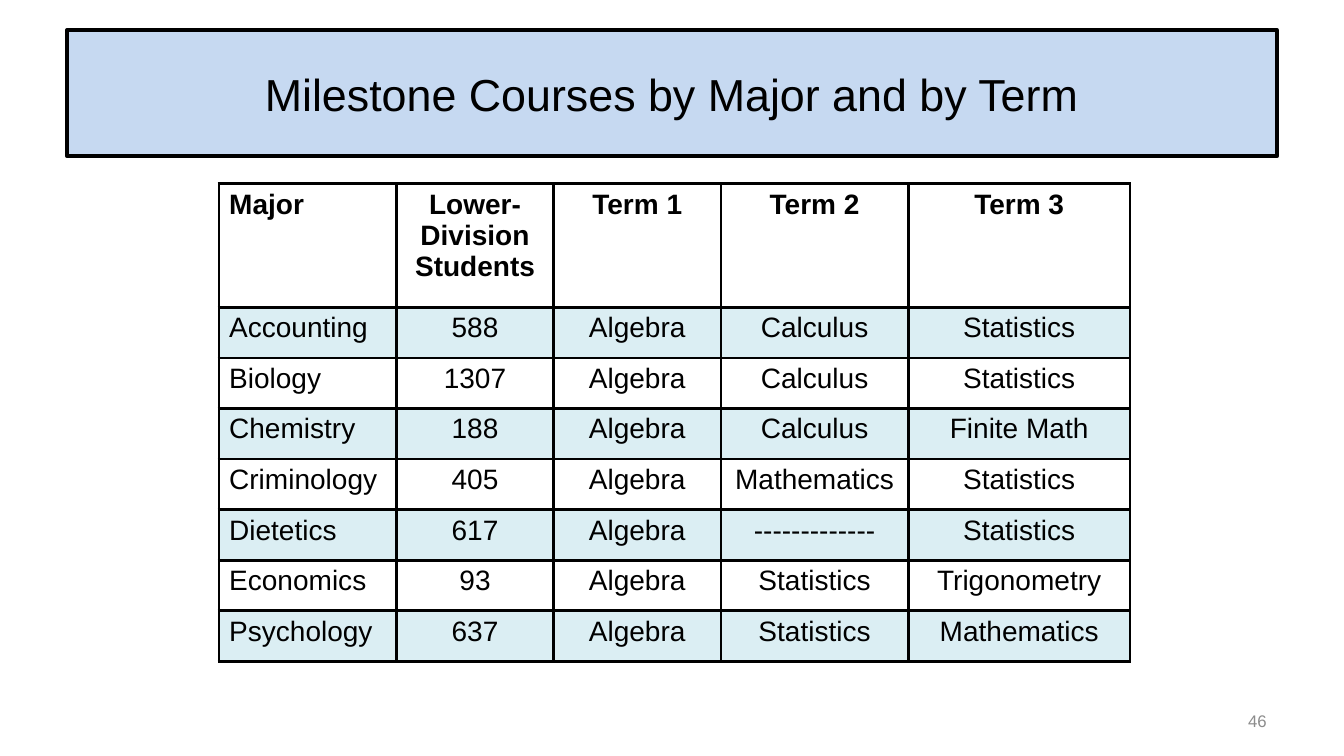
from lxml import etree
from pptx import Presentation
from pptx.dml.color import RGBColor
from pptx.enum.text import MSO_ANCHOR, PP_ALIGN
from pptx.oxml.ns import qn
from pptx.util import Pt

LEFT, CENTER, RIGHT = PP_ALIGN.LEFT, PP_ALIGN.CENTER, PP_ALIGN.RIGHT
MIDDLE = MSO_ANCHOR.MIDDLE
TITLE_ONLY = 5

BLACK, GRAY, PALE_BLUE, TEAL = "000000", "8C8C8C", "C6D9F1", "4BACC6"
BAND_OPACITY = 20
BORDER_WIDTH = 2.25

COLUMN_WIDTHS = [126.7, 112.3, 119.5, 133.9, 158.4]
HEADER_HEIGHT, ROW_HEIGHT = 88.5, 36.1
COURSES = [
    ("Major", "Lower-Division Students", "Term 1", "Term 2", "Term 3"),
    ("Accounting", "588", "Algebra", "Calculus", "Statistics"),
    ("Biology", "1307", "Algebra", "Calculus", "Statistics"),
    ("Chemistry", "188", "Algebra", "Calculus", "Finite Math"),
    ("Criminology", "405", "Algebra", "Mathematics", "Statistics"),
    ("Dietetics", "617", "Algebra", "-------------", "Statistics"),
    ("Economics", "93", "Algebra", "Statistics", "Trigonometry"),
    ("Psychology", "637", "Algebra", "Statistics", "Mathematics"),
]


def rgb(color):
    return RGBColor.from_string(color)


def write_text(frame, text, size=20, color=BLACK, bold=False, align=CENTER):
    para = frame.paragraphs[0]
    para.alignment = align
    span = para.add_run()
    span.text = text
    span.font.name = "Arial"
    span.font.size = Pt(size)
    span.font.bold = bold
    span.font.color.rgb = rgb(color)


def place(shape, left, top, width, height):
    shape.left, shape.top = Pt(left), Pt(top)
    shape.width, shape.height = Pt(width), Pt(height)


def add_title(page, text):
    title = page.shapes.title
    place(title, 48, 21.6, 864, 90)
    title.fill.solid()
    title.fill.fore_color.rgb = rgb(PALE_BLUE)
    title.line.color.rgb = rgb(BLACK)
    title.line.width = Pt(3)
    title.text_frame.vertical_anchor = MIDDLE
    write_text(title.text_frame, text, size=32)


def set_borders(cell):
    properties = cell._tc.get_or_add_tcPr()
    for side in ("a:lnL", "a:lnR", "a:lnT", "a:lnB"):
        line = etree.SubElement(properties, qn(side), w=str(Pt(BORDER_WIDTH)))
        fill = etree.SubElement(line, qn("a:solidFill"))
        etree.SubElement(fill, qn("a:srgbClr"), val=BLACK)


def set_band(cell):
    """Fill the cell with translucent teal."""
    cell.fill.solid()
    cell.fill.fore_color.rgb = rgb(TEAL)
    color = cell._tc.tcPr.find(qn("a:solidFill")).find(qn("a:srgbClr"))
    etree.SubElement(color, qn("a:alpha"), val=str(BAND_OPACITY * 1000))


def add_course_table(page, left, top):
    heights = [HEADER_HEIGHT] + [ROW_HEIGHT] * (len(COURSES) - 1)
    frame = page.shapes.add_table(
        len(COURSES), len(COLUMN_WIDTHS), Pt(left), Pt(top),
        Pt(sum(COLUMN_WIDTHS)), Pt(sum(heights)))
    table = frame.table
    table.first_row = table.horz_banding = False
    for column, width in zip(table.columns, COLUMN_WIDTHS):
        column.width = Pt(width)
    for row, height in zip(table.rows, heights):
        row.height = Pt(height)
    for row_index, entries in enumerate(COURSES):
        for column_index, text in enumerate(entries):
            cell = table.cell(row_index, column_index)
            write_text(cell.text_frame, text, bold=row_index == 0,
                       align=CENTER if column_index else LEFT)
            set_borders(cell)
            if row_index % 2:
                set_band(cell)
            else:
                cell.fill.background()


def add_page_number(page, number):
    box = page.shapes.add_textbox(Pt(688), Pt(500.5), Pt(224), Pt(28.8))
    box.text_frame.word_wrap = True
    box.text_frame.vertical_anchor = MIDDLE
    write_text(box.text_frame, number, size=12, color=GRAY, align=RIGHT)


def main():
    deck = Presentation()
    deck.slide_width, deck.slide_height = Pt(960), Pt(540)
    page = deck.slides.add_slide(deck.slide_layouts[TITLE_ONLY])
    add_title(page, "Milestone Courses by Major and by Term")
    add_course_table(page, 156.5, 131.2)
    add_page_number(page, "46")
    deck.save("out.pptx")


if __name__ == "__main__":
    main()
